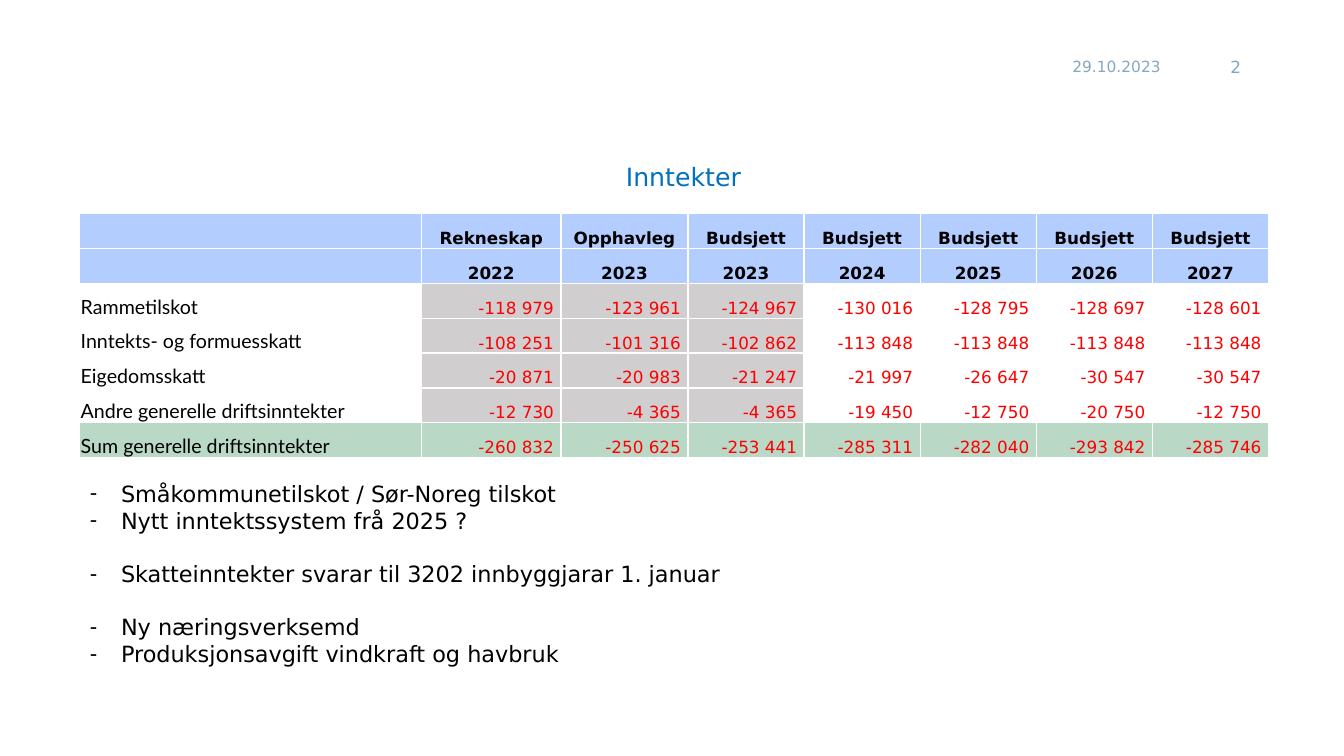
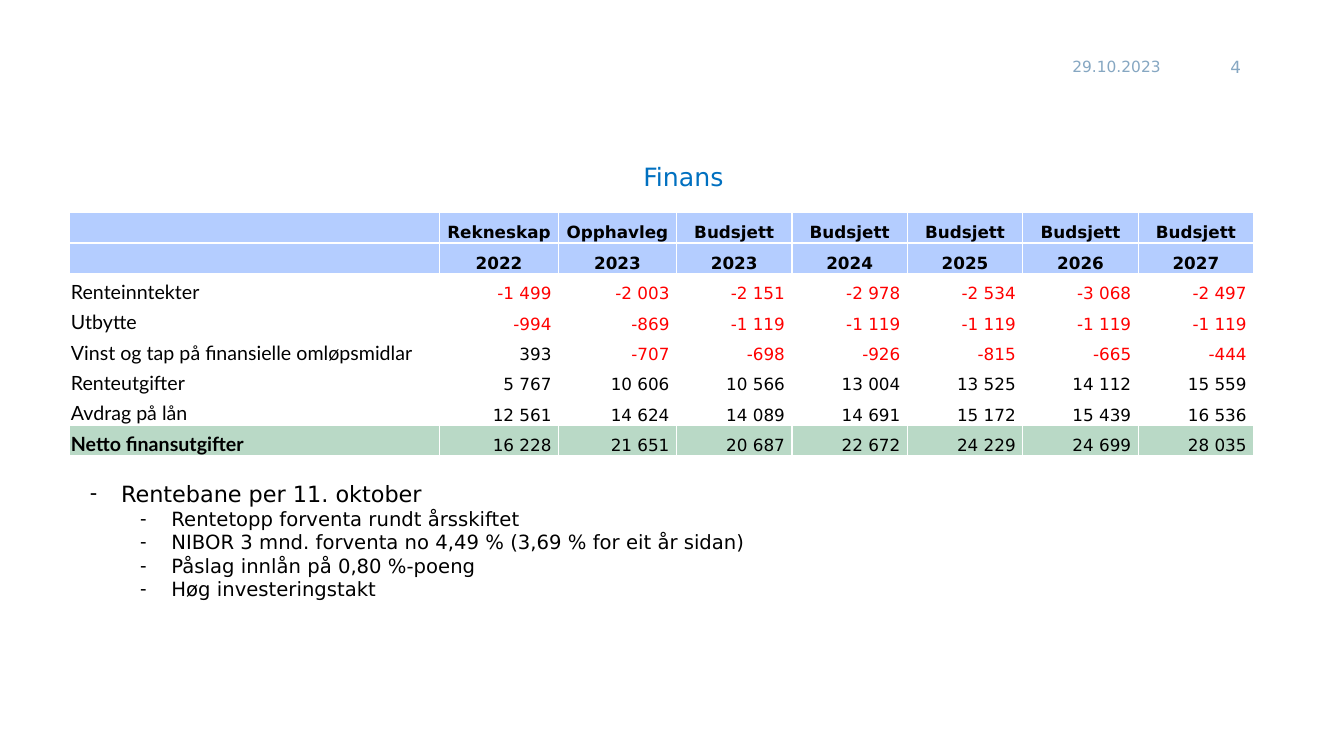
from lxml.etree import SubElement
from pptx import Presentation
from pptx.dml.color import RGBColor
from pptx.enum.text import MSO_ANCHOR, MSO_AUTO_SIZE, PP_ALIGN
from pptx.oxml.ns import qn
from pptx.util import Inches, Pt

WIDE, HIGH = Inches(13.33), Inches(7.5)
SANS, LATO = "DejaVu Sans", "Lato"
BLACK = RGBColor(0x00, 0x00, 0x00)
BLUE = RGBColor(0x00, 0x70, 0xC0)
MUTED = RGBColor(0x86, 0xA7, 0xC2)
RED = RGBColor(0xFF, 0x00, 0x00)
HEAD = RGBColor(0xB4, 0xCD, 0xFF)
GREY = RGBColor(0xD0, 0xCE, 0xCE)
GREEN = RGBColor(0xB9, 0xD9, 0xC6)

HEADS = [
    ["", "Rekneskap", "Opphavleg"] + ["Budsjett"] * 5,
    ["", "2022", "2023", "2023", "2024", "2025", "2026", "2027"],
]
INCOME = [
    ["Rammetilskot", -118979, -123961, -124967, -130016, -128795, -128697, -128601],
    ["Inntekts- og formuesskatt", -108251, -101316, -102862] + [-113848] * 4,
    ["Eigedomsskatt", -20871, -20983, -21247, -21997, -26647, -30547, -30547],
    ["Andre generelle driftsinntekter", -12730, -4365, -4365, -19450, -12750, -20750, -12750],
    ["Sum generelle driftsinntekter", -260832, -250625, -253441, -285311, -282040, -293842, -285746],
]
FINANCE = [
    ["Renteinntekter", -1499, -2003, -2151, -2978, -2534, -3068, -2497],
    ["Utbytte", -994, -869] + [-1119] * 5,
    ["Vinst og tap på finansielle omløpsmidlar", 393, -707, -698, -926, -815, -665, -444],
    ["Renteutgifter", 5767, 10606, 10566, 13004, 13525, 14112, 15559],
    ["Avdrag på lån", 12561, 14624, 14089, 14691, 15172, 15439, 16536],
    ["Netto finansutgifter", 16228, 21651, 20687, 22672, 24229, 24699, 28035],
]
INCOME_NOTES = [
    ("Småkommunetilskot / Sør-Noreg tilskot", 0, 0),
    ("Nytt inntektssystem frå 2025 ?", 0, 0),
    ("Skatteinntekter svarar til 3202 innbyggjarar 1. januar", 0, 19),
    ("Ny næringsverksemd", 0, 19),
    ("Produksjonsavgift vindkraft og havbruk", 0, 0),
]
FINANCE_NOTES = [
    ("Rentebane per 11. oktober", 0, 0),
    ("Rentetopp forventa rundt årsskiftet", 1, 0),
    ("NIBOR 3 mnd. forventa no 4,49 % (3,69 % for eit år sidan)", 1, 0),
    ("Påslag innlån på 0,80 %-poeng", 1, 0),
    ("Høg investeringstakt", 1, 0),
]


def across(share):
    """Turn a percentage of the slide's width into a length."""
    return round(WIDE * share / 100)


def down(share):
    """Turn a percentage of the slide's height into a length."""
    return round(HIGH * share / 100)


def area(x, y, w, h):
    """Give left, top, width and height from percentages of the slide."""
    return across(x), down(y), across(w), down(h)


def style(para, size, color, align=PP_ALIGN.LEFT, name=SANS, bold=False):
    """Set the alignment and font of a paragraph."""
    para.alignment = align
    font = para.font
    font.name, font.size, font.bold = name, Pt(size), bold
    font.color.rgb = color


def place(shape, spot, anchor):
    """Move a placeholder and fix its frame."""
    shape.left, shape.top, shape.width, shape.height = area(*spot)
    frame = shape.text_frame
    frame.word_wrap = True
    frame.auto_size = MSO_AUTO_SIZE.NONE
    frame.vertical_anchor = anchor
    return frame


def add_label(slide, text, spot, size, align):
    """Add a small muted text at the top of the slide."""
    frame = place(slide.shapes.add_textbox(0, 0, 0, 0), spot, MSO_ANCHOR.MIDDLE)
    frame.text = text
    style(frame.paragraphs[0], size, MUTED, align)


def add_title(slide, text):
    """Fill the title placeholder."""
    frame = place(slide.shapes.title, (17.85, 20.67, 66, 5.33), MSO_ANCHOR.TOP)
    frame.text = text
    style(frame.paragraphs[0], 18, BLUE, PP_ALIGN.CENTER)


def add_list(slide, notes):
    """Fill the body placeholder with dashed points of one or two levels."""
    frame = place(slide.placeholders[1], (5.93, 62.8, 86.57, 29.6), MSO_ANCHOR.TOP)
    for i, (text, level, gap) in enumerate(notes):
        para = frame.add_paragraph() if i else frame.paragraphs[0]
        para.text, para.level, para.space_before = text, level, Pt(gap)
        props = para._p.get_or_add_pPr()
        props.set("marL", str(Inches(0.31 + 0.5 * level)))
        props.set("indent", str(Inches(-0.31)))
        SubElement(props, qn("a:buChar"), char="-")
        style(para, 16 - 2 * level, BLACK)


def edge(cell):
    """Draw thin white borders round a cell."""
    props = cell._tc.get_or_add_tcPr()
    for side in ("lnL", "lnR", "lnT", "lnB"):
        line = SubElement(props, qn(f"a:{side}"), w=str(Pt(1)))
        fill = SubElement(line, qn("a:solidFill"))
        SubElement(fill, qn("a:srgbClr"), val="FFFFFF")


def fill_cell(cell, value, color, head, bold):
    """Write one heading, row name or figure into a cell."""
    edge(cell)
    if color is None:
        cell.fill.background()
    else:
        cell.fill.solid()
        cell.fill.fore_color.rgb = color
    figure = isinstance(value, int)
    cell.margin_left = cell.margin_top = Inches(0.01)
    cell.margin_right = Inches(0.07 if figure else 0.01)
    cell.margin_bottom = 0
    cell.vertical_anchor = MSO_ANCHOR.BOTTOM
    cell.text = f"{value:,}".replace(",", " ") if figure else value
    para = cell.text_frame.paragraphs[0]
    if head:
        style(para, 12, BLACK, PP_ALIGN.CENTER, bold=True)
    elif figure:
        style(para, 12, RED if value < 0 else BLACK, PP_ALIGN.RIGHT)
    else:
        style(para, 14, BLACK, name=LATO, bold=bold)


def add_grid(slide, data, left, top, cols, high, past=None, bold=False):
    """Add a budget table whose last row is the total."""
    rows = HEADS + data
    spot = area(left, top, sum(cols), high * len(rows))
    table = slide.shapes.add_table(len(rows), len(cols), *spot).table
    table.first_row = table.horz_banding = False
    for col, wide in zip(table.columns, cols):
        col.width = across(wide)
    for r, values in enumerate(rows):
        table.rows[r].height = down(high)
        head, total = r < len(HEADS), r == len(rows) - 1
        for c, value in enumerate(values):
            plain = past if 1 <= c <= 3 else None
            color = HEAD if head else GREEN if total else plain
            fill_cell(table.cell(r, c), value, color, head, bold and total)


def add_page(deck, number, title, notes):
    """Add a slide with date, number, title and list."""
    slide = deck.slides.add_slide(deck.slide_layouts[1])
    add_label(slide, "29.10.2023", (79.05, 6.17, 8.63, 5.33), 11, PP_ALIGN.LEFT)
    add_label(slide, number, (88.8, 6.17, 4.28, 5.33), 12, PP_ALIGN.RIGHT)
    add_title(slide, title)
    add_list(slide, notes)
    return slide


def main():
    """Build the two budget slides."""
    deck = Presentation()
    deck.slide_width, deck.slide_height = WIDE, HIGH
    page = add_page(deck, "2", "Inntekter", INCOME_NOTES)
    cols = [25.43, 10.38, 9.45] + [8.64] * 5
    add_grid(page, INCOME, 5.93, 28.27, cols, 4.61, past=GREY)
    page = add_page(deck, "4", "Finans", FINANCE_NOTES)
    cols = [27.5, 8.86, 8.78] + [8.59] * 5
    add_grid(page, FINANCE, 5.2, 28.13, cols, 4.02, bold=True)
    deck.save("out.pptx")


if __name__ == "__main__":
    main()
